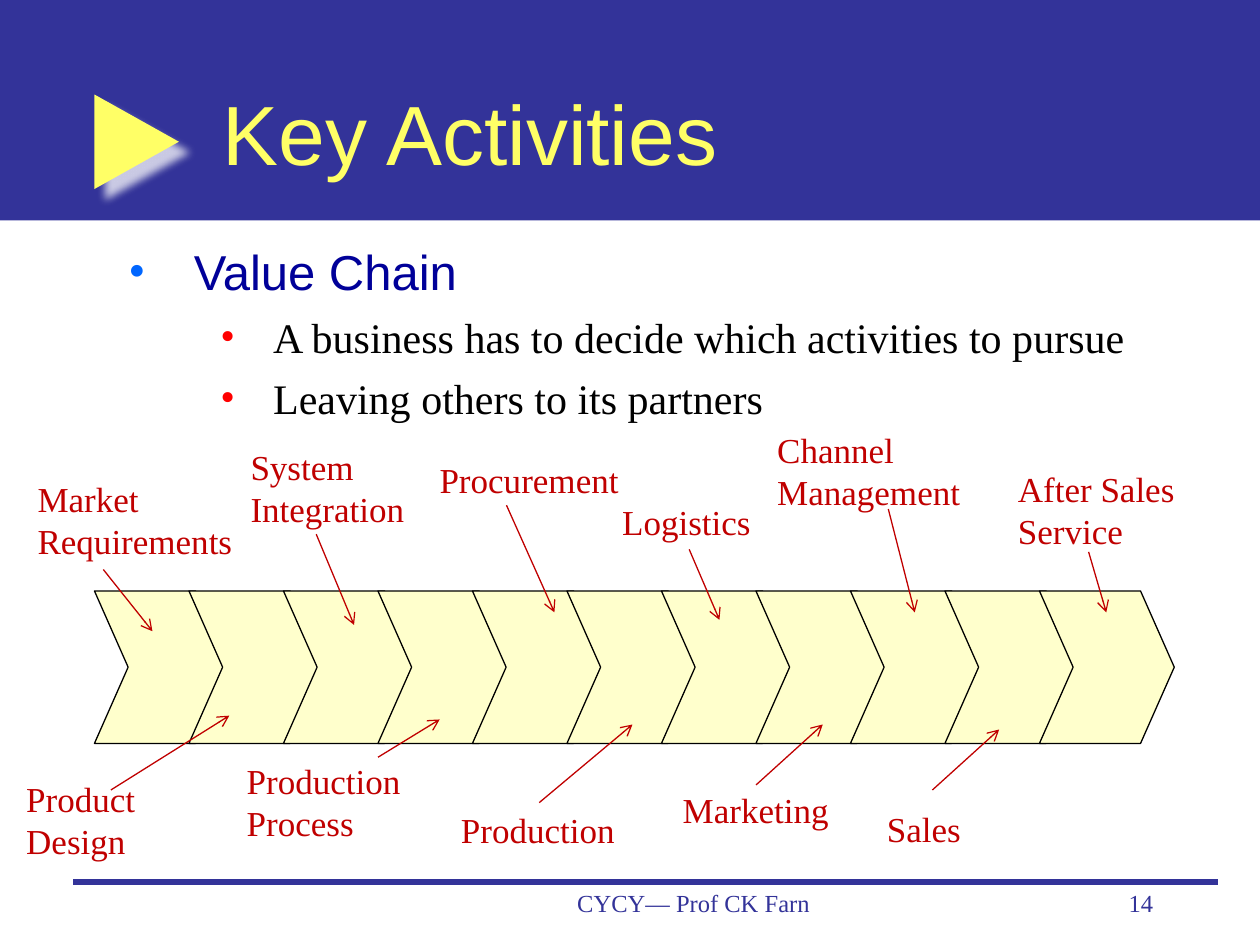
"""Build the Key Activities slide: a value chain with its labelled steps."""
import pptx
import pptx.dml.color
import pptx.enum.shapes
import pptx.enum.text
import pptx.oxml
import pptx.oxml.ns
import pptx.util
from pptx.util import Inches

COLORS = {
    "navy": "333399", "yellow": "FFFF66", "cream": "FFFFCC", "red": "C00000",
    "heading": "000099", "black": "000000", "blue_dot": "0066FF",
    "red_dot": "FF0000", "white": "FFFFFF",
}
SANS, SERIF = "Arial", "Times New Roman"
SHAPE = pptx.enum.shapes.MSO_SHAPE
ALIGN = pptx.enum.text.PP_ALIGN
ANCHOR = pptx.enum.text.MSO_ANCHOR

LABELS = [
    (0.11, 6.12, 1.14, ["Product", "Design"]),
    (1.86, 5.98, 1.5, ["Production", "Process"]),
    (3.56, 6.37, 1.43, ["Production"]),
    (5.32, 6.21, 1.37, ["Marketing"]),
    (0.2, 3.74, 1.76, ["Market", "Requirements"]),
    (1.89, 3.49, 1.43, ["System", "Integration"]),
    (3.39, 3.59, 1.63, ["Procurement"]),
    (4.84, 3.92, 1.23, ["Logistics"]),
    (6.07, 3.35, 1.66, ["Channel", "Management"]),
    (6.94, 6.36, 0.79, ["Sales"]),
    (7.98, 3.66, 1.45, ["After Sales", "Service"]),
]
ARROWS = [
    (0.82, 4.52, 1.21, 5.01), (0.88, 6.27, 1.82, 5.68),
    (3, 6.01, 3.49, 5.71), (4.28, 6.37, 5.02, 5.75),
    (5.47, 4.36, 5.71, 4.92), (6, 6.23, 6.53, 5.75),
    (2.51, 4.24, 2.81, 4.96), (4.02, 4.01, 4.4, 4.86),
    (7.05, 4.04, 7.26, 4.86), (7.4, 6.27, 7.93, 5.79),
    (8.64, 4.38, 8.78, 4.86),
]
BULLETS = [
    ("Value Chain", 28, SANS, "heading", "blue_dot", 0, 0.52, -0.52),
    ("A business has to decide which activities to pursue",
     24, SERIF, "black", "red_dot", 1, 1.15, -0.42),
    ("Leaving others to its partners",
     24, SERIF, "black", "red_dot", 1, 1.15, -0.42),
]


def rgb(name):
    return pptx.dml.color.RGBColor.from_string(COLORS[name])


def add_xml(parent, tag, **attrs):
    el = pptx.oxml.parse_xml(f"<a:{tag} {pptx.oxml.ns.nsdecls('a')}/>")
    for key, value in attrs.items():
        el.set(key, str(value))
    parent.append(el)
    return el


def add_run(p, text, size, font, color):
    r = p.add_run()
    r.text = text
    r.font.size = pptx.util.Pt(size)
    r.font.name = font
    r.font.color.rgb = rgb(color)


def add_text(s, box, lines, size, font, color, align=ALIGN.LEFT,
             anchor=ANCHOR.TOP, wrap=True):
    tf = s.shapes.add_textbox(*map(Inches, box)).text_frame
    tf.word_wrap = wrap
    tf.vertical_anchor = anchor
    for i, line in enumerate(lines):
        p = tf.add_paragraph() if i else tf.paragraphs[0]
        p.alignment = align
        add_run(p, line, size, font, color)


def add_bullets(s, box):
    tf = s.shapes.add_textbox(*map(Inches, box)).text_frame
    tf.word_wrap = True
    for i, (text, size, font, color, dot, level, left, first) in enumerate(BULLETS):
        p = tf.add_paragraph() if i else tf.paragraphs[0]
        p.level = level
        if i:
            p.space_before = pptx.util.Pt(6)
        ppr = p._p.get_or_add_pPr()
        ppr.set("marL", str(Inches(left)))
        ppr.set("indent", str(Inches(first)))
        add_xml(add_xml(ppr, "buClr"), "srgbClr", val=COLORS[dot])
        add_xml(ppr, "buFont", typeface=SERIF)
        add_xml(ppr, "buChar", char="•")
        add_run(p, text, size, font, color)


def add_shape(s, kind, box, fill, line=None, adjustments=()):
    sp = s.shapes.add_shape(kind, *map(Inches, box))
    sp.shadow.inherit = False
    for i, value in enumerate(adjustments):
        sp.adjustments[i] = value
    sp.fill.solid()
    sp.fill.fore_color.rgb = rgb(fill)
    if line:
        sp.line.color.rgb = rgb(line)
        sp.line.width = pptx.util.Pt(0.75)
    else:
        sp.line.fill.background()
    return sp


def add_glow_shadow(sp):
    effects = sp._element.spPr.find(pptx.oxml.ns.qn("a:effectLst"))
    shadow = add_xml(effects, "outerShdw", blurRad=pptx.util.Pt(5),
                     dist=pptx.util.Pt(8.5), dir=45 * 60000,
                     algn="ctr", rotWithShape=0)
    add_xml(add_xml(shadow, "srgbClr", val=COLORS["white"]), "alpha", val=75000)


def add_line(s, points, color, width, arrow=False):
    cxn = s.shapes.add_connector(
        pptx.enum.shapes.MSO_CONNECTOR.STRAIGHT, *map(Inches, points))
    cxn.line.color.rgb = rgb(color)
    cxn.line.width = pptx.util.Pt(width)
    if arrow:
        add_xml(cxn.line._get_or_add_ln(), "tailEnd", type="arrow")
    add_xml(cxn._element.spPr, "effectLst")


def main():
    prs = pptx.Presentation()
    prs.slide_width, prs.slide_height = Inches(10), Inches(7.5)
    s = prs.slides.add_slide(prs.slide_layouts[6])

    add_shape(s, SHAPE.RECTANGLE, (0, 0, 10, 1.75), "navy")
    pointer = add_shape(s, SHAPE.RIGHT_ARROW, (0.75, 0.75, 0.67, 0.75),
                        "yellow", adjustments=(0.384, 1))
    add_glow_shadow(pointer)
    add_line(s, (0.58, 7, 9.67, 7), "navy", 3)
    add_text(s, (3.92, 7, 3.17, 0.5), ["CYCY— Prof CK Farn"], 14, SERIF,
             "navy", ALIGN.CENTER)
    add_text(s, (7.17, 7, 2.08, 0.5), ["14"], 14, SERIF, "navy", ALIGN.RIGHT)
    add_text(s, (1.67, 0.42, 7.58, 1.25), ["Key Activities"], 48, SANS,
             "yellow", anchor=ANCHOR.MIDDLE)
    add_bullets(s, (0.92, 1.87, 8.55, 1.46))

    for i in range(11):
        add_shape(s, SHAPE.CHEVRON, (0.75 + 0.75 * i, 4.69, 1.07, 1.21),
                  "cream", "black", (0.25,))
    for points in ARROWS:
        add_line(s, points, "red", 0.75, arrow=True)
    for left, top, width, lines in LABELS:
        height = 0.44 if len(lines) == 1 else 0.77
        add_text(s, (left, top, width, height), lines, 20, SERIF, "red",
                 wrap=False)

    prs.save("out.pptx")


if __name__ == "__main__":
    main()
